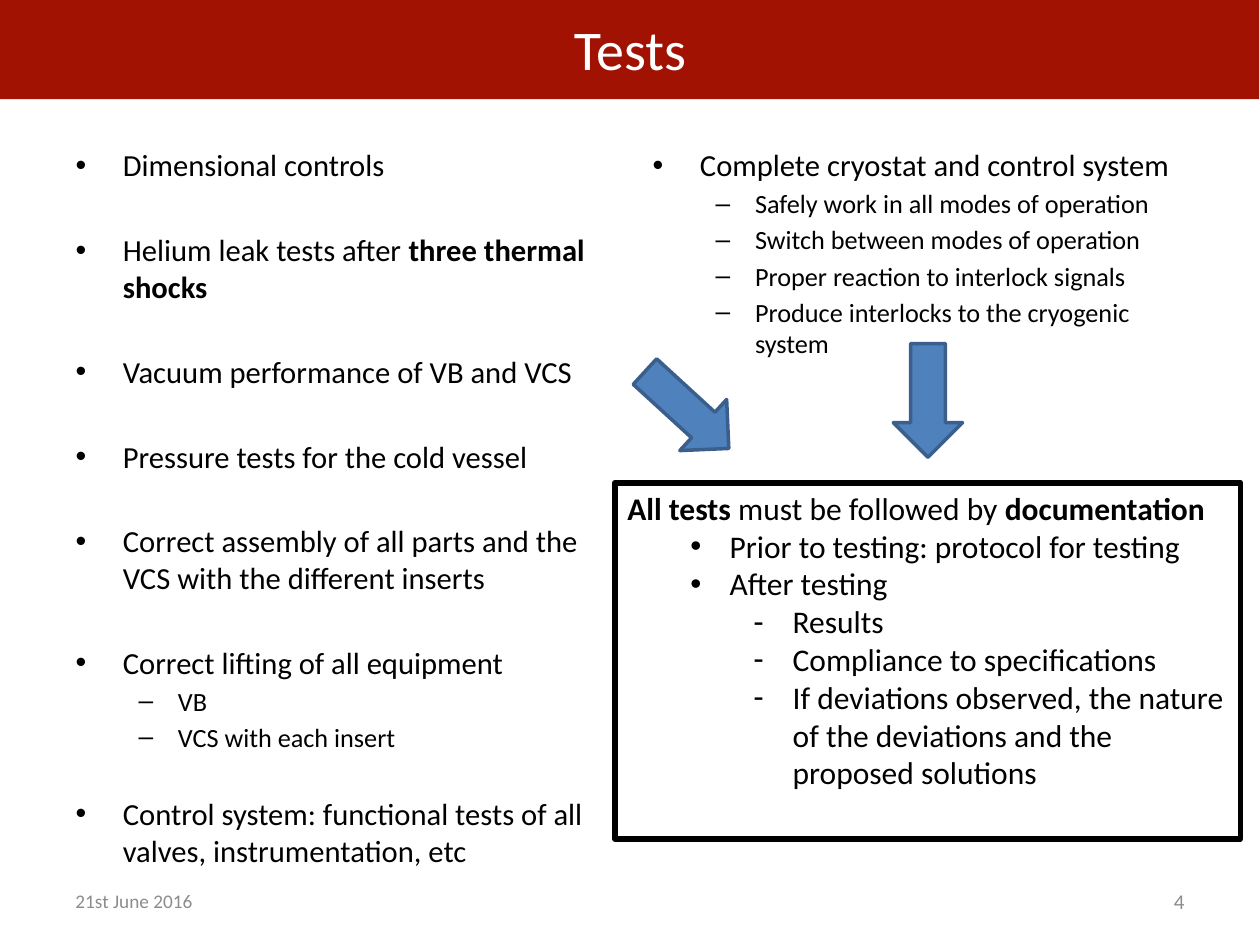
from dataclasses import dataclass

from lxml import etree
from pptx import Presentation
from pptx.dml.color import RGBColor
from pptx.enum import shapes, text
from pptx.oxml import ns
from pptx.util import Pt


@dataclass(frozen=True)
class Theme:
    font: str = "Calibri"
    band: RGBColor = RGBColor(0xA1, 0x12, 0x03)
    light: RGBColor = RGBColor(0xFF, 0xFF, 0xFF)
    dark: RGBColor = RGBColor(0, 0, 0)
    muted: RGBColor = RGBColor(0x8C, 0x8C, 0x8C)
    arrow: RGBColor = RGBColor(0x4F, 0x81, 0xBD)
    arrow_line: RGBColor = RGBColor(0x3A, 0x5F, 0x8C)
    title: float = 32
    item: float = 17.5
    subitem: float = 15
    note: float = 18
    date: float = 11
    number: float = 12


THEME = Theme()

# Kinds of list line: level, bullet, left indent, hanging indent, size, space before
ITEM = (0, "•", 27, 27, THEME.item, 27.5)
AFTER_SUBITEMS = (0, "•", 27, 27, THEME.item, 24)
SUBITEM = (1, "–", 58.5, 22.5, THEME.subitem, 2.65)
NOTE = (0, None, 0, 0, THEME.note, 0)
NOTE_ITEM = (1, "•", 58.5, 22.5, THEME.note, 0)
NOTE_SUBITEM = (2, "-", 94.5, 22.5, THEME.note, 0)

# Every second part of a line, split at "**", is bold
TESTS = [
    (ITEM, "Dimensional controls"),
    (ITEM, "Helium leak tests after **three thermal shocks"),
    (ITEM, "Vacuum performance of VB and VCS"),
    (ITEM, "Pressure tests for the cold vessel"),
    (ITEM, "Correct assembly of all parts and the VCS with the different inserts"),
    (ITEM, "Correct lifting of all equipment"),
    (SUBITEM, "VB"),
    (SUBITEM, "VCS with each insert"),
    (AFTER_SUBITEMS, "Control system: functional tests of all valves, instrumentation, etc"),
]
SYSTEM_TESTS = [
    (ITEM, "Complete cryostat and control system"),
    (SUBITEM, "Safely work in all modes of operation"),
    (SUBITEM, "Switch between modes of operation"),
    (SUBITEM, "Proper reaction to interlock signals"),
    (SUBITEM, "Produce interlocks to the cryogenic system"),
]
DOCUMENTATION = [
    (NOTE, "**All tests ** must be followed by **documentation".replace("** must", "**must")),
    (NOTE_ITEM, "Prior to testing: protocol for testing"),
    (NOTE_ITEM, "After testing"),
    (NOTE_SUBITEM, "Results"),
    (NOTE_SUBITEM, "Compliance to specifications"),
    (NOTE_SUBITEM, "If deviations observed, the nature of the deviations and the proposed solutions"),
]


def place(shape, left, top, width, height):
    shape.left, shape.top = Pt(left), Pt(top)
    shape.width, shape.height = Pt(width), Pt(height)


def style(paragraph, size, color):
    paragraph.font.name = THEME.font
    paragraph.font.size = Pt(size)
    paragraph.font.color.rgb = color


def set_bullet(paragraph, character, left, hanging):
    properties = paragraph._p.get_or_add_pPr()
    properties.set("marL", str(Pt(left)))
    properties.set("indent", str(-Pt(hanging)))
    if character:
        font = etree.SubElement(properties, ns.qn("a:buFont"))
        font.set("typeface", "Arial")
        etree.SubElement(properties, ns.qn("a:buChar")).set("char", character)


def fill_list(frame, lines):
    frame.word_wrap = True
    frame.auto_size = text.MSO_AUTO_SIZE.NONE
    frame.vertical_anchor = text.MSO_ANCHOR.TOP
    for index, (kind, line) in enumerate(lines):
        level, character, left, hanging, size, gap = kind
        paragraph = frame.add_paragraph() if index else frame.paragraphs[0]
        paragraph.level = level
        paragraph.alignment = text.PP_ALIGN.LEFT
        paragraph.space_before = Pt(gap if index else 0)
        set_bullet(paragraph, character, left, hanging)
        style(paragraph, size, THEME.dark)
        for position, part in enumerate(line.split("**")):
            if part:
                run = paragraph.add_run()
                run.text = part
                if position % 2:
                    run.font.bold = True


def add_shape(slide, kind, box, fill=None, line=None, weight=0):
    shape = slide.shapes.add_shape(kind, *map(Pt, box))
    shape.shadow.inherit = False
    if fill is None:
        shape.fill.background()
    else:
        shape.fill.solid()
        shape.fill.fore_color.rgb = fill
    if line is None:
        shape.line.fill.background()
    else:
        shape.line.color.rgb = line
        shape.line.width = Pt(weight)
    return shape


def add_arrow(slide, left, top, rotation):
    arrow = add_shape(slide, shapes.MSO_SHAPE.RIGHT_ARROW, (left, top, 65, 39.6),
                      THEME.arrow, THEME.arrow_line, 2)
    arrow.rotation = rotation


def add_footer(slide, left, words, size, alignment):
    box = slide.shapes.add_textbox(Pt(left), Pt(500.5), Pt(168), Pt(28.75))
    box.text_frame.word_wrap = True
    box.text_frame.vertical_anchor = text.MSO_ANCHOR.MIDDLE
    paragraph = box.text_frame.paragraphs[0]
    paragraph.text = words
    paragraph.alignment = alignment
    style(paragraph, size, THEME.muted)


def set_title(slide, words):
    title = slide.shapes.title
    place(title, 36, 3.6, 648, 48.25)
    frame = title.text_frame
    frame.text = words
    frame.auto_size = text.MSO_AUTO_SIZE.NONE
    frame.vertical_anchor = text.MSO_ANCHOR.MIDDLE
    frame.paragraphs[0].alignment = text.PP_ALIGN.CENTER
    style(frame.paragraphs[0], THEME.title, THEME.light)


def main():
    presentation = Presentation()
    presentation.slide_width, presentation.slide_height = Pt(720), Pt(540)
    slide = presentation.slides.add_slide(presentation.slide_layouts[3])

    # Title on its band, which lies behind everything
    band = add_shape(slide, shapes.MSO_SHAPE.RECTANGLE, (-0.5, 0, 720, 56.7), THEME.band)
    slide.shapes._spTree.insert(2, band._element)
    set_title(slide, "Tests")

    # Two columns of tests
    columns = [(36, 402.5, TESTS), (365.75, 136, SYSTEM_TESTS)]
    for index, (left, height, lines) in enumerate(columns, start=1):
        body = slide.placeholders[index]
        place(body, left, 80, 318, height)
        fill_list(body.text_frame, lines)

    # Footer
    add_footer(slide, 36, "21st June 2016", THEME.date, text.PP_ALIGN.LEFT)
    add_footer(slide, 516, "4", THEME.number, text.PP_ALIGN.RIGHT)

    # Both columns lead to the documentation box
    add_arrow(slide, 360, 214.5, 42.5)
    note = add_shape(slide, shapes.MSO_SHAPE.RECTANGLE, (351.4, 275.8, 357.5, 203.5),
                     line=THEME.dark, weight=3.25)
    fill_list(note.text_frame, DOCUMENTATION)
    add_arrow(slide, 497.75, 209, 90)

    presentation.save("out.pptx")


if __name__ == "__main__":
    main()
